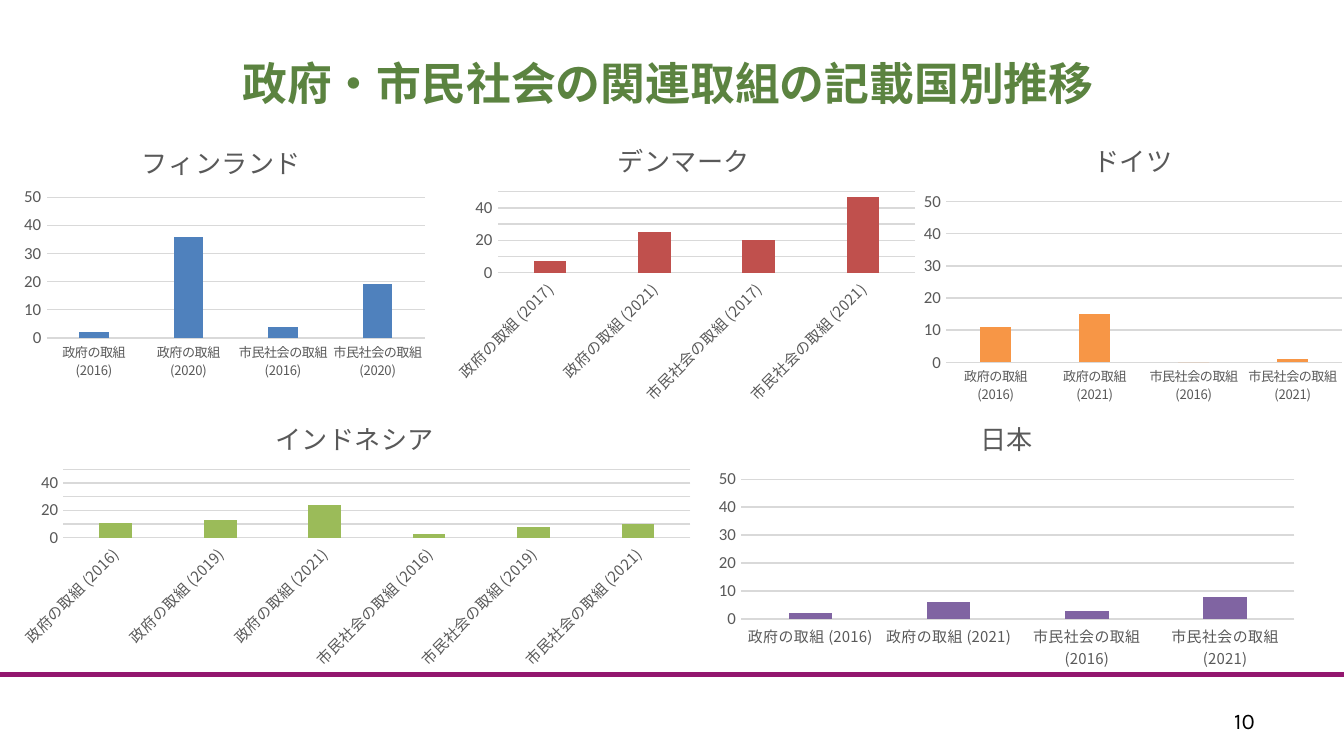
import pptx
import pptx.chart.data
import pptx.dml.color
import pptx.enum.chart
import pptx.enum.shapes
import pptx.enum.text
import pptx.oxml
import pptx.oxml.ns
import pptx.util

SLIDE_WIDTH = pptx.util.Inches(10)
SLIDE_HEIGHT = SLIDE_WIDTH * 9 // 16
CELL = SLIDE_WIDTH / 100
COLORS = {
    "heading": "5B8340",
    "rule": "93166F",
    "number": "000000",
    "label": "595959",
    "grid": "D9D9D9",
    "finland": "4F81BD",
    "denmark": "C0504D",
    "germany": "F79646",
    "indonesia": "9BBB59",
    "japan": "8064A2",
}
JAPANESE = "Noto Sans CJK JP"
LATIN = "Calibri"
ACTORS = ("政府の取組", "市民社会の取組")
SLANTED = "-2700000"
AUTOMATIC = "-60000000"
FINLAND_PLOT = {"x": 0.105, "y": 0.271, "w": 0.853, "h": 0.509}

COUNTRIES = [
    dict(country="フィンランド", color="finland", years=(2016, 2020), values=(2, 36, 4, 19),
         box=(0, 9.1, 33, 20.6), label_size=7, plot=FINLAND_PLOT),
    dict(country="デンマーク", color="denmark", years=(2017, 2021), values=(7, 25, 20, 47),
         box=(33, 8.9, 35.8, 21.6), maximum=None, rotation=SLANTED),
    dict(country="ドイツ", color="germany", years=(2016, 2021), values=(11, 15, 0, 1),
         box=(68.1, 8.9, 32.4, 21.6), label_size=7),
    dict(country="インドネシア", color="indonesia", years=(2016, 2019, 2021),
         values=(11, 13, 24, 3, 8, 10), box=(0.4, 29.6, 52, 20.6), rotation=SLANTED),
    dict(country="日本", color="japan", years=(2016, 2021), values=(2, 6, 3, 8),
         box=(52.6, 29.6, 44.6, 20.6)),
]


def grid(*cells):
    return [round(cell * CELL) for cell in cells]


def rgb(name):
    return pptx.dml.color.RGBColor.from_string(COLORS[name])


def style_font(font, size, face, color, bold=False):
    font.size = pptx.util.Pt(size)
    font.name = face
    font.bold = bold
    font.color.rgb = rgb(color)


def set_east_asian_faces(element):
    for latin in list(element.iter(pptx.oxml.ns.qn("a:latin"))):
        face = latin.get("typeface")
        if face == JAPANESE:
            latin.addnext(pptx.oxml.parse_xml(
                f'<a:ea {pptx.oxml.ns.nsdecls("a")} typeface="{face}"/>'))


def add_text(slide, text, box, size, face, color, bold=False,
             anchor=pptx.enum.text.MSO_ANCHOR.TOP):
    textbox = slide.shapes.add_textbox(*grid(*box))
    frame = textbox.text_frame
    frame.word_wrap = True
    frame.vertical_anchor = anchor
    paragraph = frame.paragraphs[0]
    paragraph.alignment = pptx.enum.text.PP_ALIGN.CENTER
    run = paragraph.add_run()
    run.text = text
    style_font(run.font, size, face, color, bold)
    set_east_asian_faces(textbox.element)


def add_rule(slide, row):
    rule = slide.shapes.add_connector(
        pptx.enum.shapes.MSO_CONNECTOR.STRAIGHT, *grid(0, row, 100, row))
    rule.line.color.rgb = rgb("rule")
    rule.line.width = pptx.util.Pt(3)
    rule.element.spPr.append(
        pptx.oxml.parse_xml(f'<a:effectLst {pptx.oxml.ns.nsdecls("a")}/>'))


def style_axis(axis, size, face):
    axis.major_tick_mark = pptx.enum.chart.XL_TICK_MARK.NONE
    axis.minor_tick_mark = pptx.enum.chart.XL_TICK_MARK.NONE
    style_font(axis.tick_labels.font, size, face, "label")


def style_line(line):
    line.color.rgb = rgb("grid")
    line.width = pptx.util.Pt(0.75)


def set_plot_area(chart, plot):
    area = chart._chartSpace.chart.plotArea
    for layout in area.findall(pptx.oxml.ns.qn("c:layout")):
        area.remove(layout)
    shares = "".join(f'<c:{key} val="{share}"/>' for key, share in plot.items())
    area.insert(0, pptx.oxml.parse_xml(
        f'<c:layout {pptx.oxml.ns.nsdecls("c")}><c:manualLayout>'
        '<c:layoutTarget val="inner"/><c:xMode val="edge"/><c:yMode val="edge"/>'
        f'{shares}</c:manualLayout></c:layout>'))


def add_country_chart(slide, country, color, years, values, box, label_size=8,
                      maximum=50, rotation=AUTOMATIC, plot=None):
    data = pptx.chart.data.CategoryChartData()
    data.categories = [f"{actor} ({year})" for actor in ACTORS for year in years]
    data.add_series(country, values)
    chart = slide.shapes.add_chart(
        pptx.enum.chart.XL_CHART_TYPE.COLUMN_CLUSTERED, *grid(*box), data).chart
    style_font(chart.font, 10, LATIN, "number")
    chart.has_legend = False
    chart.has_title = True
    title = chart.chart_title.text_frame
    title.text = country
    style_font(title.paragraphs[0].runs[0].font, 14, JAPANESE, "label")

    bars = chart.plots[0]
    bars.vary_by_categories = False
    bars.gap_width = 219
    bars.overlap = -27
    fill = bars.series[0].format.fill
    fill.solid()
    fill.fore_color.rgb = rgb(color)

    categories = chart.category_axis
    style_axis(categories, label_size, JAPANESE)
    style_line(categories.format.line)
    for body in categories._element.iter(pptx.oxml.ns.qn("a:bodyPr")):
        body.set("rot", rotation)
        body.set("vert", "horz")

    counts = chart.value_axis
    style_axis(counts, 9, LATIN)
    counts.format.line.fill.background()
    style_line(counts.major_gridlines.format.line)
    counts.major_unit = 10
    if maximum:
        counts.maximum_scale = maximum
    if plot:
        set_plot_area(chart, plot)
    set_east_asian_faces(chart._chartSpace)


def main():
    presentation = pptx.Presentation()
    presentation.slide_width = SLIDE_WIDTH
    presentation.slide_height = SLIDE_HEIGHT
    slide = presentation.slides.add_slide(presentation.slide_layouts[6])
    add_rule(slide, row=50.2)
    add_text(slide, "10", (90.2, 52.1, 4.8, 3), size=12, face="Karla", color="number")
    for country in COUNTRIES:
        add_country_chart(slide, **country)
    add_text(slide, "政府・市民社会の関連取組の記載国別推移", (-0.3, 2.1, 100, 8.1),
             size=24, face=JAPANESE, color="heading", bold=True,
             anchor=pptx.enum.text.MSO_ANCHOR.MIDDLE)
    presentation.save("out.pptx")


if __name__ == "__main__":
    main()
